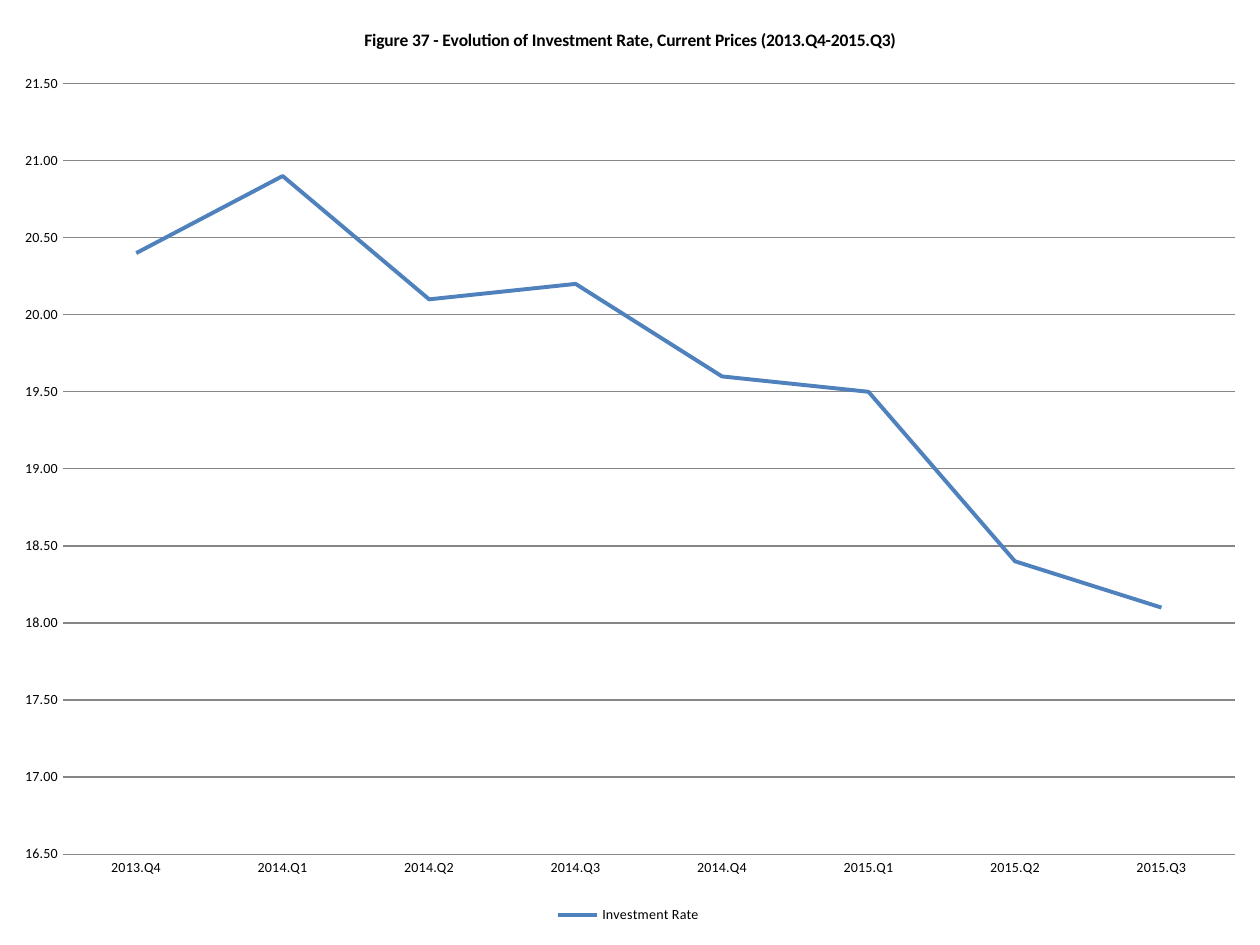
from pptx import Presentation
from pptx.chart.data import CategoryChartData
from pptx.dml.color import RGBColor
from pptx.enum.chart import (
    XL_CHART_TYPE, XL_LEGEND_POSITION, XL_MARKER_STYLE, XL_TICK_MARK)
from pptx.oxml import parse_xml
from pptx.oxml.ns import nsdecls
from pptx.util import Inches, Pt

LINE_CHART = XL_CHART_TYPE.LINE
LEGEND_BOTTOM = XL_LEGEND_POSITION.BOTTOM
NO_MARKER = XL_MARKER_STYLE.NONE
NO_TICKS = XL_TICK_MARK.NONE

BLACK = RGBColor(0x00, 0x00, 0x00)
GRAY = RGBColor(0x86, 0x86, 0x86)
BLUE = RGBColor(0x4F, 0x81, 0xBD)
FONT = "Calibri"

TITLE = "Figure 37 - Evolution of Investment Rate, Current Prices (2013.Q4-2015.Q3)"
RATES = {
    "2013.Q4": 20.4,
    "2014.Q1": 20.9,
    "2014.Q2": 20.1,
    "2014.Q3": 20.2,
    "2014.Q4": 19.6,
    "2015.Q1": 19.5,
    "2015.Q2": 18.4,
    "2015.Q3": 18.1,
}


def set_font(font, size, bold=False):
    font.name = FONT
    font.size = Pt(size)
    font.bold = bold
    font.color.rgb = BLACK


def set_line(line, color, width):
    line.color.rgb = color
    line.width = Pt(width)


def add_title(chart):
    chart.has_title = True
    chart.chart_title.include_in_layout = False
    span = chart.chart_title.text_frame.paragraphs[0].add_run()
    span.text = TITLE
    set_font(span.font, 10, bold=True)


def format_axes(chart):
    for axis in (chart.category_axis, chart.value_axis):
        axis.major_tick_mark = NO_TICKS
        axis.minor_tick_mark = NO_TICKS
        set_font(axis.tick_labels.font, 8)
    set_line(chart.category_axis.format.line, GRAY, 0.75)

    values = chart.value_axis
    values.minimum_scale, values.maximum_scale, values.major_unit = 16.5, 21.5, 0.5
    values.tick_labels.number_format = "0.00"
    values.tick_labels.number_format_is_linked = False
    values.format.line.fill.background()
    values.has_major_gridlines = True
    set_line(values.major_gridlines.format.line, GRAY, 0.75)


def place_plot(chart, left, top, width, height):
    """Fix the inner plot area, in fractions of the chart."""
    plot_area = chart.plots[0]._element.getparent()
    for layout in plot_area.findall("{*}layout"):
        plot_area.remove(layout)
    plot_area.insert(0, parse_xml(
        f'<c:layout {nsdecls("c")}><c:manualLayout>'
        '<c:layoutTarget val="inner"/>'
        '<c:xMode val="edge"/><c:yMode val="edge"/>'
        f'<c:x val="{left}"/><c:y val="{top}"/>'
        f'<c:w val="{width}"/><c:h val="{height}"/>'
        '</c:manualLayout></c:layout>'))


def add_rate_chart(page, left, top, width, height):
    data = CategoryChartData(number_format="0.00")
    data.categories = list(RATES)
    data.add_series("Investment Rate ", list(RATES.values()))
    chart = page.shapes.add_chart(LINE_CHART, left, top, width, height, data).chart
    set_font(chart.font, 10)
    add_title(chart)
    format_axes(chart)
    place_plot(chart, 0.05, 0.09, 0.93, 0.83)

    chart.has_legend = True
    chart.legend.position = LEGEND_BOTTOM
    chart.legend.include_in_layout = False
    set_font(chart.legend.font, 8)

    chart.plots[0].vary_by_categories = False
    series = chart.plots[0].series[0]
    series.smooth = False
    series.marker.style = NO_MARKER
    set_line(series.format.line, BLUE, 2.25)


def main():
    deck = Presentation()
    deck.slide_width, deck.slide_height = Inches(10), Inches(7.5)
    page = deck.slides.add_slide(deck.slide_layouts[6])
    add_rate_chart(page, 0, 0, Inches(10), Inches(7.37))
    deck.save("out.pptx")


if __name__ == "__main__":
    main()
